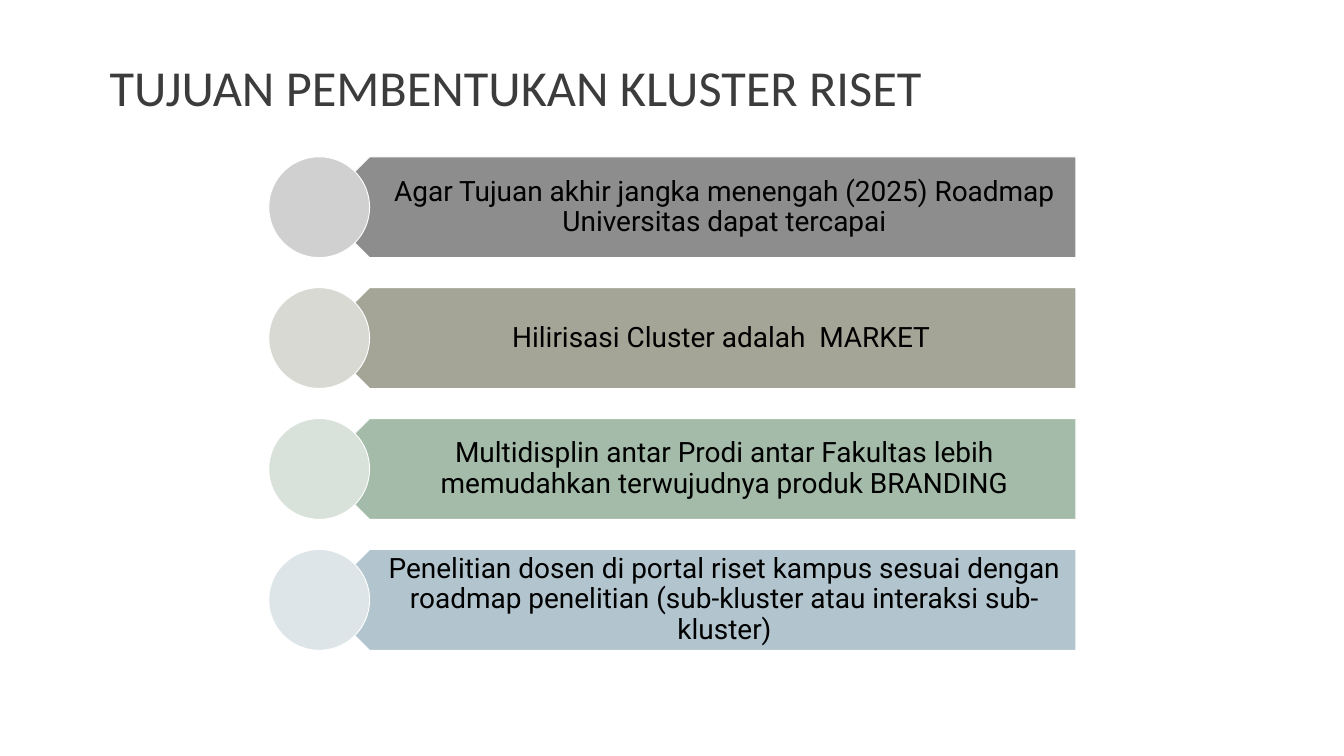
from dataclasses import dataclass

from pptx import Presentation
from pptx.dml.color import RGBColor
from pptx.enum.shapes import MSO_SHAPE
from pptx.enum.text import MSO_ANCHOR, MSO_AUTO_SIZE, PP_ALIGN
from pptx.util import Emu, Pt

PLATE, DISC = MSO_SHAPE.PENTAGON, MSO_SHAPE.OVAL
MIDDLE, NO_FIT = MSO_ANCHOR.MIDDLE, MSO_AUTO_SIZE.NONE
LEFT, CENTER = PP_ALIGN.LEFT, PP_ALIGN.CENTER
TITLE_ONLY = 5
SCALE = 9525
TOP, PITCH, SIZE = 224, 187, 144


@dataclass(frozen=True)
class Theme:
    """Colours, fonts and type sizes of the slide."""
    paper: str = "FFFFFF"
    head: str = "3C3C3C"
    ink: str = "000000"
    head_font: str = "Calibri"
    body_font: str = "Roboto"
    head_size: int = 54
    body_size: int = 30
    edge: int = 1


THEME = Theme()
GOALS = [
    ("Agar Tujuan akhir jangka menengah (2025) Roadmap Universitas dapat tercapai",
     "8D8D8D", "D0D0D0"),
    ("Hilirisasi Cluster adalah  MARKET ", "A5A597", "D9D9D4"),
    ("Multidisplin antar Prodi antar Fakultas lebih memudahkan terwujudnya produk BRANDING",
     "A3BBA8", "D8E1DA"),
    ("Penelitian dosen di portal riset kampus sesuai dengan roadmap penelitian "
     "(sub-kluster atau interaksi sub-kluster)", "B2C5CE", "DDE5E8"),
]


def px(*nums):
    """Turn whole px into EMU lengths."""
    return [Emu(num * SCALE) for num in nums]


def write(frame, text, font, size, color, align):
    """Put one formatted run in a text frame."""
    frame.word_wrap = True
    frame.auto_size = NO_FIT
    frame.vertical_anchor = MIDDLE
    para = frame.paragraphs[0]
    para.alignment = align
    para.line_spacing = 0.9
    run = para.add_run()
    run.text = text
    run.font.name = font
    run.font.size = Pt(size)
    run.font.color.rgb = RGBColor.from_string(color)


def add_title(slide, text):
    """Place and format the title placeholder."""
    title = slide.shapes.title
    title.left, title.top, title.width, title.height = px(147, 58, 1625, 142)
    write(title.text_frame, text, THEME.head_font, THEME.head_size, THEME.head, LEFT)


def add_form(slide, kind, box, fill, turn=0):
    """Draw a filled preset shape with a thin pale edge."""
    form = slide.shapes.add_shape(kind, *px(*box))
    form.shadow.inherit = False
    form.rotation = turn
    form.fill.solid()
    form.fill.fore_color.rgb = RGBColor.from_string(fill)
    form.line.color.rgb = RGBColor.from_string(THEME.paper)
    form.line.width = Pt(THEME.edge)


def add_label(slide, box, text):
    """Add the centred text of a goal."""
    frame = slide.shapes.add_textbox(*px(*box)).text_frame
    (frame.margin_left, frame.margin_top,
     frame.margin_right, frame.margin_bottom) = px(63, 12, 22, 12)
    write(frame, text, THEME.body_font, THEME.body_size, THEME.ink, CENTER)


def add_goal(slide, top, text, dark, pale):
    """Build one row: plate, label and disc."""
    add_form(slide, PLATE, (456, top, 1081, SIZE), dark, 180)
    add_label(slide, (492, top, 1045, SIZE), text)
    add_form(slide, DISC, (384, top, SIZE, SIZE), pale)


def main():
    """Build and save the slide."""
    deck = Presentation()
    deck.slide_width, deck.slide_height = px(1920, 1080)
    slide = deck.slides.add_slide(deck.slide_layouts[TITLE_ONLY])
    slide.background.fill.solid()
    slide.background.fill.fore_color.rgb = RGBColor.from_string(THEME.paper)
    add_title(slide, "TUJUAN PEMBENTUKAN KLUSTER RISET")
    for row, goal in enumerate(GOALS):
        add_goal(slide, TOP + row * PITCH, *goal)
    deck.save("out.pptx")


if __name__ == "__main__":
    main()
